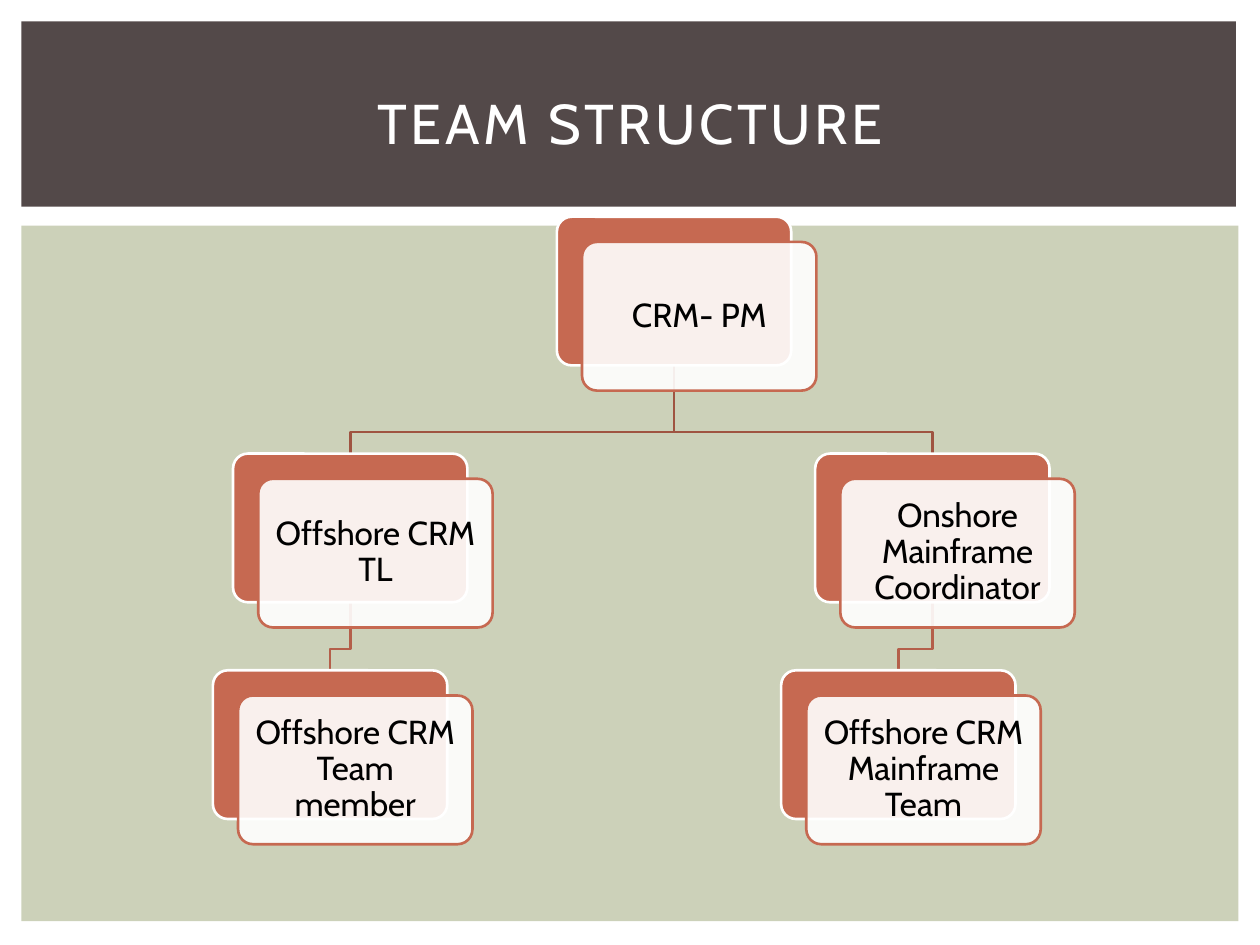
from pptx import Presentation
from pptx.dml.color import RGBColor
from pptx.enum.shapes import MSO_SHAPE as Shape
from pptx.enum.text import MSO_ANCHOR as Anchor, PP_ALIGN as Align
from pptx.oxml.ns import qn
from pptx.util import Inches, Pt
from lxml.etree import SubElement

WHITE = RGBColor(0xFF, 0xFF, 0xFF)
BLACK = RGBColor(0, 0, 0)
SAGE = RGBColor(0xCC, 0xD1, 0xB9)
UMBER = RGBColor(0x53, 0x49, 0x49)
TERRACOTTA = RGBColor(0xC6, 0x69, 0x51)
UPPER_BRANCH = RGBColor(0x9F, 0x54, 0x41)
LOWER_BRANCH = RGBColor(0xB4, 0x5F, 0x4A)

CARD_WIDTH, CARD_HEIGHT = 1.86, 1.18
CARD_OFFSET = 0.2
ELBOW_RISE = 0.17


class TeamSlide:
    font = "Cabin"
    line_width = Pt(1.5)

    def __init__(self, slide):
        self.slide = slide

    def panel(self, left, top, width, height, fill, kind=Shape.RECTANGLE):
        panel = self.slide.shapes.add_shape(
            kind, Inches(left), Inches(top), Inches(width), Inches(height))
        panel.shadow.inherit = False
        panel.fill.solid()
        panel.fill.fore_color.rgb = fill
        panel.line.fill.background()
        return panel

    def outline(self, shape, color):
        shape.line.color.rgb = color
        shape.line.width = self.line_width

    def label(self, frame, text, size, color):
        frame.word_wrap = True
        frame.vertical_anchor = Anchor.MIDDLE
        paragraph = frame.paragraphs[0]
        paragraph.text = text
        paragraph.alignment = Align.CENTER
        paragraph.font.name = self.font
        paragraph.font.size = Pt(size)
        paragraph.font.color.rgb = color
        return paragraph

    def title(self, text, left, top, width, height):
        heading = self.slide.shapes.add_textbox(
            Inches(left), Inches(top), Inches(width), Inches(height))
        paragraph = self.label(heading.text_frame, text, 32, WHITE)
        paragraph.runs[0]._r.get_or_add_rPr().set("spc", "200")

    def branch(self, parent, child, color):
        start_x, end_x = (left + CARD_WIDTH / 2 for left in (parent[0], child[0]))
        start_y, end_y = parent[1] + CARD_HEIGHT, child[1]
        elbow_y = end_y - ELBOW_RISE
        route = [(start_x, elbow_y), (end_x, elbow_y), (end_x, end_y)]
        builder = self.slide.shapes.build_freeform(
            Inches(start_x), Inches(start_y))
        builder.add_line_segments(
            [(Inches(x), Inches(y)) for x, y in route], close=False)
        elbow = builder.convert_to_shape()
        elbow.shadow.inherit = False
        elbow.fill.background()
        self.outline(elbow, color)

    def card(self, role, left, top):
        layers = [(0, TERRACOTTA, WHITE), (CARD_OFFSET, WHITE, TERRACOTTA)]
        for offset, fill, border in layers:
            front = self.panel(left + offset, top + offset, CARD_WIDTH,
                               CARD_HEIGHT, fill, Shape.ROUNDED_RECTANGLE)
            front.adjustments[0] = 0.1
            self.outline(front, border)
        color = front._element.spPr.find(qn("a:solidFill"))[0]
        SubElement(color, qn("a:alpha"), val="90000")
        frame = front.text_frame
        frame.margin_left = frame.margin_right = Inches(0.08)
        frame.margin_top = frame.margin_bottom = Inches(0.08)
        paragraph = self.label(frame, role, 19, BLACK)
        paragraph.line_spacing = 0.9
        paragraph.space_after = Pt(6.65)


def main():
    deck = Presentation()
    deck.slide_width, deck.slide_height = Inches(10), Inches(7.5)
    team = TeamSlide(deck.slides.add_slide(deck.slide_layouts[6]))

    team.panel(0.17, 1.79, 9.66, 5.52, SAGE)
    team.panel(0.17, 0.17, 9.64, 1.47, UMBER)

    manager, lead, coordinator = (4.42, 1.72), (1.85, 3.6), (6.47, 3.6)
    members, mainframe = (1.69, 5.32), (6.2, 5.32)

    team.branch(coordinator, mainframe, LOWER_BRANCH)
    team.branch(manager, coordinator, UPPER_BRANCH)
    team.branch(lead, members, LOWER_BRANCH)
    team.branch(manager, lead, UPPER_BRANCH)

    roles = [
        ("CRM- PM", manager),
        ("Offshore CRM TL", lead),
        ("Offshore CRM Team member", members),
        ("Onshore Mainframe Coordinator", coordinator),
        ("Offshore CRM Mainframe Team", mainframe),
    ]
    for role, place in roles:
        team.card(role, *place)

    team.title("TEAM STRUCTURE", 0.42, 0.39, 9.17, 1.15)
    deck.save("out.pptx")


if __name__ == "__main__":
    main()
